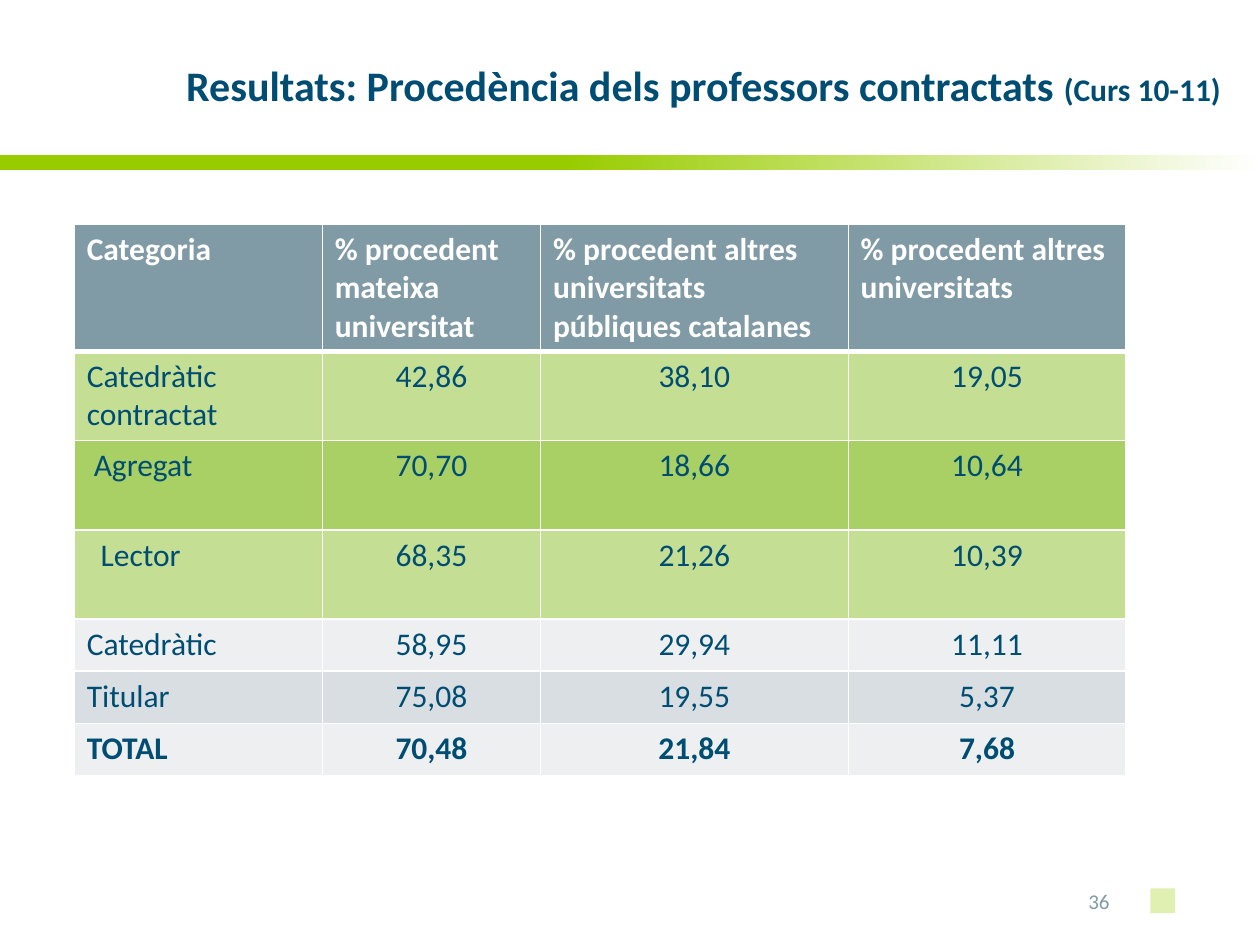
import pptx
import pptx.dml.color
import pptx.enum.shapes
import pptx.enum.text
import pptx.oxml
import pptx.oxml.ns
import pptx.util
import lxml.etree

Cm = pptx.util.Cm
Pt = pptx.util.Pt
Align = pptx.enum.text.PP_ALIGN
Anchor = pptx.enum.text.MSO_ANCHOR

NAVY = "004D73"
SLATE = "809BA5"
GREEN = "99CC00"
WHITE = "FFFFFF"
LIGHT_GREEN = "C4DE93"
MID_GREEN = "A9D064"
PALE_GREY = "EDEFF0"
MID_GREY = "D8DEE1"

HEADERS = [
    "Categoria",
    "% procedent mateixa universitat",
    "% procedent altres universitats públiques catalanes",
    "% procedent altres universitats",
]
ROWS = [
    (["Catedràtic contractat", "42,86", "38,10", "19,05"], LIGHT_GREEN, 1.8),
    (["Agregat", "70,70", "18,66", "10,64"], MID_GREEN, 1.8),
    (["Lector", "68,35", "21,26", "10,39"], LIGHT_GREEN, 1.8),
    (["Catedràtic", "58,95", "29,94", "11,11"], PALE_GREY, 1.05),
    (["Titular", "75,08", "19,55", "5,37"], MID_GREY, 1.05),
    (["TOTAL", "70,48", "21,84", "7,68"], PALE_GREY, 1.05),
]
COLUMN_WIDTHS = [5, 4.4, 6.2, 5.6]
LABEL_INDENTS = {"Agregat": 0.14, "Lector": 0.28}


def color(value):
    return pptx.dml.color.RGBColor.from_string(value)


def set_attributes(target, values):
    for name, value in values.items():
        setattr(target, name, value)


def add_run(paragraph, text, size, hex_color, bold=False):
    run = paragraph.add_run()
    run.text = text
    set_attributes(run.font, {"name": "Calibri", "size": Pt(size), "bold": bold})
    run.font.color.rgb = color(hex_color)


def add_rectangle(slide, left, top, width, height):
    shape = slide.shapes.add_shape(
        pptx.enum.shapes.MSO_SHAPE.RECTANGLE, Cm(left), Cm(top), Cm(width), Cm(height)
    )
    shape.shadow.inherit = False
    shape.line.fill.background()
    return shape


def add_gradient_band(slide):
    band = add_rectangle(slide, 0, 3.12, 25.4, 0.3)
    band.fill.gradient()
    band.fill.gradient_angle = 0
    for stop, position, value in zip(band.fill.gradient_stops, (0.45, 1), (GREEN, WHITE)):
        stop.position = position
        stop.color.rgb = color(value)


def add_corner_square(slide):
    square = add_rectangle(slide, 23.19, 17.91, 0.5, 0.5)
    square.fill.solid()
    square.fill.fore_color.rgb = color(GREEN)
    fill_color = square.fill._xPr.find(".//" + pptx.oxml.ns.qn("a:srgbClr"))
    lxml.etree.SubElement(fill_color, pptx.oxml.ns.qn("a:alpha"), val="30000")


def format_title(slide):
    title = slide.shapes.title
    set_attributes(
        title, {"left": Cm(3.5), "top": Cm(0.91), "width": Cm(21.6), "height": Cm(1.6)}
    )
    set_attributes(
        title.text_frame,
        {
            "word_wrap": True,
            "vertical_anchor": Anchor.MIDDLE,
            "auto_size": pptx.enum.text.MSO_AUTO_SIZE.NONE,
        },
    )
    paragraph = title.text_frame.paragraphs[0]
    paragraph.alignment = Align.LEFT
    add_run(paragraph, "Resultats: Procedència dels professors contractats ", 24, NAVY, True)
    add_run(paragraph, "(Curs 10-11)", 18, NAVY, True)


def add_page_number(slide):
    box = slide.shapes.add_textbox(Cm(21.69), Cm(17.65), Cm(1.4), Cm(1.02))
    set_attributes(box.text_frame, {"word_wrap": True, "vertical_anchor": Anchor.MIDDLE})
    add_run(box.text_frame.paragraphs[0], "36", 12, SLATE)


def set_borders(cell, top, bottom):
    properties = cell._tc.get_or_add_tcPr()
    for side, width in {"L": 1, "R": 1, "T": top, "B": bottom}.items():
        properties.append(
            pptx.oxml.parse_xml(
                f'<a:ln{side} {pptx.oxml.ns.nsdecls("a")} w="{Pt(width)}">'
                f'<a:solidFill><a:srgbClr val="{WHITE}"/></a:solidFill></a:ln{side}>'
            )
        )


def fill_cell(cell, text, fill, text_color, bold, alignment, borders):
    set_borders(cell, *borders)
    cell.fill.solid()
    cell.fill.fore_color.rgb = color(fill)
    cell.margin_left = Cm(0.25 + LABEL_INDENTS.get(text, 0))
    paragraph = cell.text_frame.paragraphs[0]
    paragraph.alignment = alignment
    add_run(paragraph, text, 18, text_color, bold)


def add_origin_table(slide):
    rows = [(HEADERS, SLATE, 2.56)] + ROWS
    table = slide.shapes.add_table(
        len(rows), len(HEADERS), Cm(1.5), Cm(4.52),
        Cm(sum(COLUMN_WIDTHS)), Cm(sum(height for _, _, height in rows)),
    ).table
    for column, width in zip(table.columns, COLUMN_WIDTHS):
        column.width = Cm(width)
    for row_index, (texts, fill, height) in enumerate(rows):
        table.rows[row_index].height = Cm(height)
        header = row_index == 0
        borders = (3 if row_index == 1 else 1, 3 if header else 1)
        for column_index, text in enumerate(texts):
            fill_cell(
                table.cell(row_index, column_index), text, fill,
                WHITE if header else NAVY,
                header or texts[0] == "TOTAL",
                Align.LEFT if header or column_index == 0 else Align.CENTER,
                borders,
            )


def main():
    presentation = pptx.Presentation()
    set_attributes(presentation, {"slide_width": Cm(25.4), "slide_height": Cm(19.05)})
    slide = presentation.slides.add_slide(presentation.slide_layouts[5])
    add_gradient_band(slide)
    add_corner_square(slide)
    add_page_number(slide)
    format_title(slide)
    add_origin_table(slide)
    presentation.save("out.pptx")


if __name__ == "__main__":
    main()
